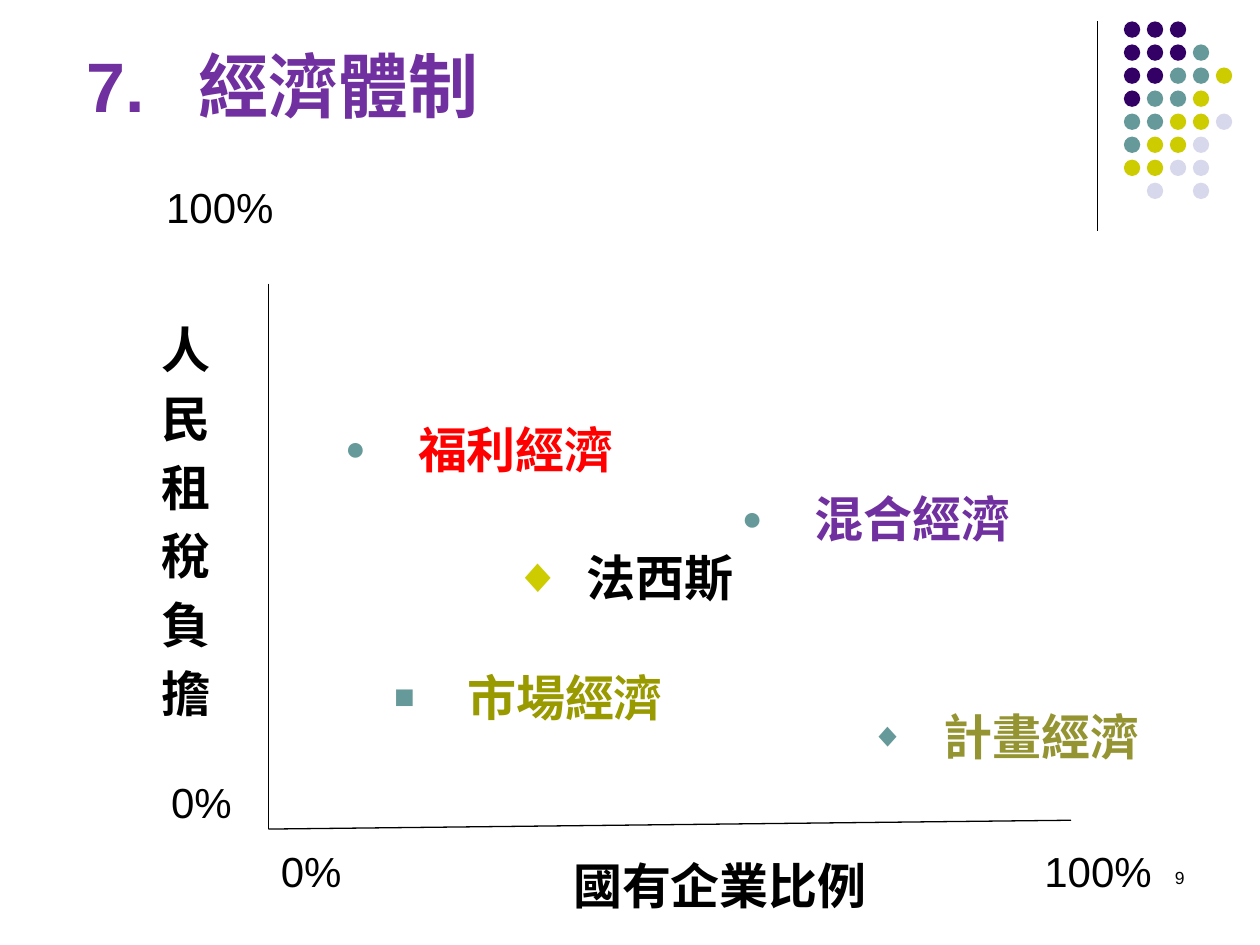
import pptx
import pptx.dml.color
import pptx.enum.shapes
import pptx.enum.text
import pptx.oxml.ns
import pptx.util
import lxml.etree

SCALE = 9144  # EMU in one px, 100 px to the inch
INK = {
    "black": "000000",
    "purple": "7030A0",
    "red": "FF0000",
    "olive": "999900",
    "moss": "949432",
    "plum": "330066",
    "teal": "669999",
    "lime": "CCCC00",
    "mist": "D8D8EC",
}
DOTS = ["PPP", "PPPT", "PPTTL", "PTTL", "TTLLM", "TLLM", "LLMM", " M M"]
TONES = {"P": "plum", "T": "teal", "L": "lime", "M": "mist"}


def px(num):
    return pptx.util.Emu(round(num * SCALE))


def rgb(name):
    return pptx.dml.color.RGBColor.from_string(INK[name])


def add_sub(parent, tag, **attrs):
    return lxml.etree.SubElement(parent, pptx.oxml.ns.qn(tag), attrs)


def add_text(slide, box, text, size, ink="black", bold=False):
    frame = slide.shapes.add_textbox(*map(px, box)).text_frame
    frame.word_wrap = True
    frame.text = text
    for para in frame.paragraphs:
        for run in para.runs:
            run.font.name = "Arial"
            run.font.size = pptx.util.Pt(size)
            run.font.bold = bold
            run.font.color.rgb = rgb(ink)
    return frame


def hang(para, gap):
    props = para._p.get_or_add_pPr()
    props.set("marL", str(px(gap)))
    props.set("indent", str(-px(gap)))
    return props


def add_mark(para, char, ink, part):
    props = hang(para, 58)
    add_sub(add_sub(props, "a:buClr"), "a:srgbClr", val=INK[ink])
    add_sub(props, "a:buSzPct", val=str(part * 1000))
    add_sub(props, "a:buFont", typeface="Arial")
    add_sub(props, "a:buChar", char=char)


def add_line(slide, *ends):
    kind = pptx.enum.shapes.MSO_CONNECTOR.STRAIGHT
    line = slide.shapes.add_connector(kind, *map(px, ends))
    line.line.color.rgb = rgb("black")
    line.line.width = pptx.util.Pt(0.75)
    add_sub(line._element.spPr, "a:effectLst")


def draw_dots(slide, left, top, width, height):
    # Rule to the left of the dots
    add_line(slide, left - 21, top, left - 21, top + 166)
    # Dot grid
    size = 13
    step_x = (width - size) / 4
    step_y = (height - size) / (len(DOTS) - 1)
    for row, marks in enumerate(DOTS):
        for col, mark in enumerate(marks):
            if mark == " ":
                continue
            spot = (left + col * step_x, top + row * step_y, size, size)
            dot = slide.shapes.add_shape(
                pptx.enum.shapes.MSO_SHAPE.OVAL, *map(px, spot))
            dot.shadow.inherit = False
            dot.fill.solid()
            dot.fill.fore_color.rgb = rgb(TONES[mark])
            dot.line.fill.background()


def draw_title(slide, *box):
    frame = add_text(slide, box, "7.\t經濟體制", 40, "purple", True)
    hang(frame.paragraphs[0], 89)


def draw_page(slide, *box):
    frame = add_text(slide, box, "9", 10)
    frame.paragraphs[0].alignment = pptx.enum.text.PP_ALIGN.RIGHT


def draw_plot(slide, left, top, width, height):
    def place(x, y, wide, high):
        return left + x, top + y, wide, high

    # Axes
    base = top + height
    add_line(slide, left, base, left + width, base - 7)
    add_line(slide, left, top, left, base)

    # Axis ends
    for text, x, y, wide in [
        ("100%", -91, -86, 118),
        ("0%", -87, 386, 79),
        ("0%", 0, 441, 102),
        ("100%", 606, 441, 118),
    ]:
        add_text(slide, place(x, y, wide, 50), text, 24)

    # Axis names
    add_text(slide, place(232, 449, 291, 57), "國有企業比例", 28, bold=True)
    tall = add_text(slide, place(-95, 24, 71, 340),
                    "\n".join("人民租稅負擔"), 28, bold=True)
    for para in tall.paragraphs[1:]:
        para.space_before = pptx.util.Pt(5.6)

    # Systems, each with its marker
    for text, ink, x, y, char, tone, part in [
        ("法西斯", "black", 185, 205, "◆", "lime", 100),
        ("市場經濟", "olive", 90, 300, "■", "teal", 70),
        ("計畫經濟", "moss", 468, 331, "◆", "teal", 70),
        ("福利經濟", "red", 51, 103, "●", "teal", 70),
        ("混合經濟", "purple", 366, 158, "●", "teal", 70),
    ]:
        frame = add_text(slide, place(x, y, 236, 57), text, 28, ink, True)
        add_mark(frame.paragraphs[0], char, tone, part)


def main():
    deck = pptx.Presentation()
    deck.slide_width, deck.slide_height = px(1000), px(750)
    slide = deck.slides.add_slide(deck.slide_layouts[6])
    draw_dots(slide, 892, 17, 86, 141)
    draw_title(slide, 59, 29, 803, 94)
    draw_page(slide, 717, 683, 233, 50)
    draw_plot(slide, 213, 225, 637, 433)
    deck.save("out.pptx")


if __name__ == "__main__":
    main()
